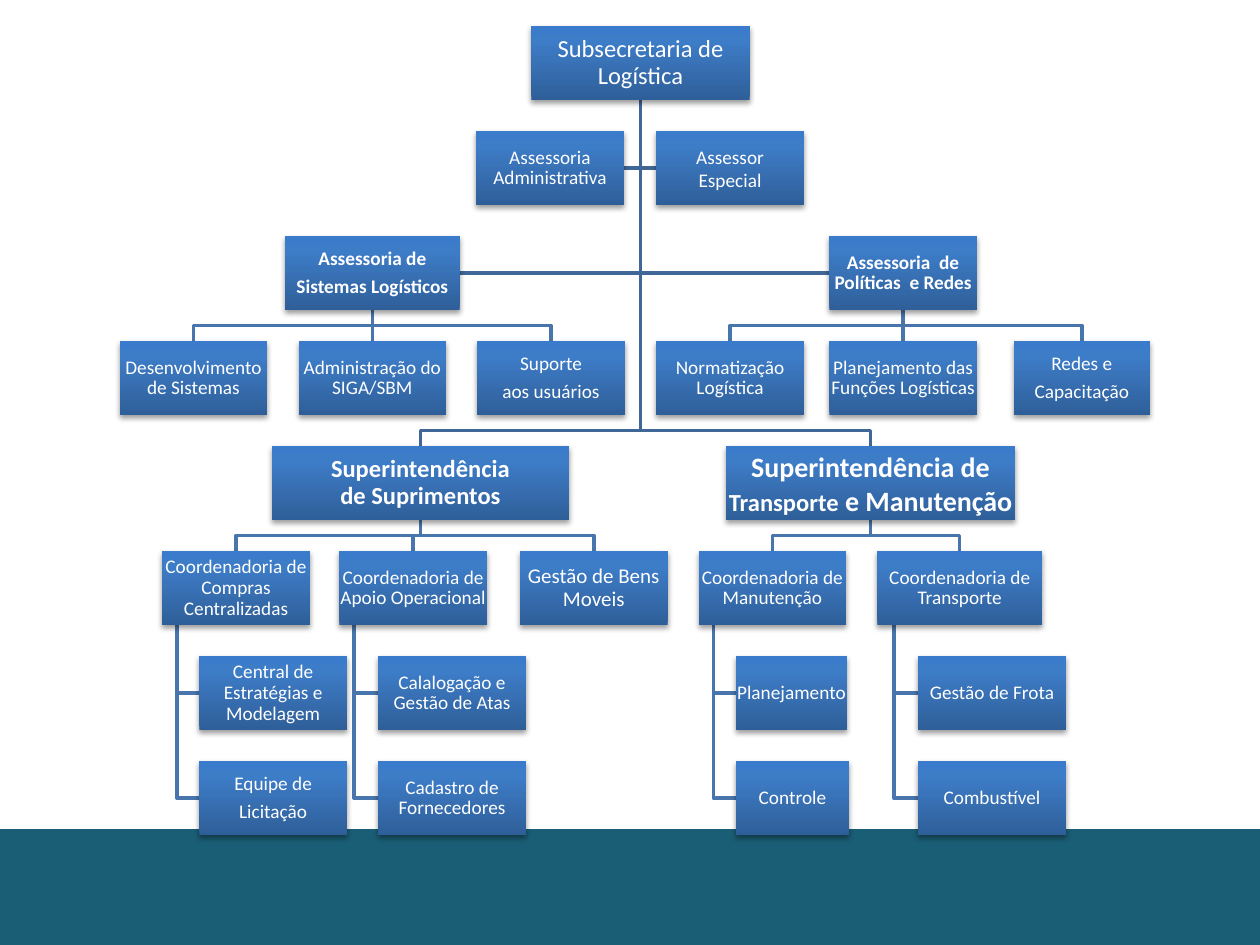
from collections import namedtuple
from pptx import Presentation
from pptx.dml.color import RGBColor
from pptx.enum.shapes import MSO_CONNECTOR, MSO_SHAPE
from pptx.enum.text import MSO_ANCHOR, PP_ALIGN
from pptx.oxml import parse_xml
from pptx.oxml.ns import nsdecls
from pptx.util import Pt

WHITE = RGBColor(0xFF, 0xFF, 0xFF)
TEAL = RGBColor(0x1A, 0x5E, 0x75)
MAIN_LINE = RGBColor(0x3F, 0x67, 0x97)
BRANCH_LINE = RGBColor(0x48, 0x75, 0xAC)

TOP, PITCH, HEIGHT, WIDTH = 15, 60, 42.25, 84.4
BUS_GAP = 9

GRADIENT = f"""<a:gradFill {nsdecls('a')} rotWithShape="1"><a:gsLst>
<a:gs pos="0"><a:srgbClr val="2F5F99"/></a:gs>
<a:gs pos="80000"><a:srgbClr val="3D7CC7"/></a:gs>
<a:gs pos="100000"><a:srgbClr val="3A7CCB"/></a:gs>
</a:gsLst><a:lin ang="16200000" scaled="0"/></a:gradFill>"""
LINE = f"<a:ln {nsdecls('a')}><a:noFill/></a:ln>"
SHADOW = f"""<a:effectLst {nsdecls('a')}>
<a:outerShdw blurRad="40000" dist="20000" dir="5400000" rotWithShape="0">
<a:srgbClr val="000000"><a:alpha val="38000"/></a:srgbClr>
</a:outerShdw></a:effectLst>"""

Unit = namedtuple(
    "Unit", "parent link row left text width size bold spacing gap",
    defaults=(WIDTH, 11, False, 0.9, 0.35))

units = {
    "logística": Unit(None, None, 0, 303.6, "Subsecretaria de Logística", 124.8, 14),
    "transporte": Unit("logística", "down", 4, 414.9, "Superintendência de\nTransporte e Manutenção",
                       165.2, 16, True, 1.0, 0),
    "coord. transporte": Unit("transporte", "down", 5, 501.3, "Coordenadoria de Transporte", 94.3),
    "frota": Unit("coord. transporte", "side", 6, 524.7, "Gestão de Frota"),
    "combustível": Unit("coord. transporte", "side", 7, 524.7, "Combustível"),
    "manutenção": Unit("transporte", "down", 5, 399.2, "Coordenadoria de Manutenção"),
    "planejamento": Unit("manutenção", "side", 6, 420.5, "Planejamento", 63.6),
    "controle": Unit("manutenção", "side", 7, 420.5, "Controle", 64.8),
    "suprimentos": Unit("logística", "down", 4, 155.5, "Superintendência\nde Suprimentos",
                        169.6, 14, True, 0.9, 0),
    "bens": Unit("suprimentos", "down", 5, 297.1, "Gestão de Bens Moveis", size=12),
    "apoio": Unit("suprimentos", "down", 5, 193.9, "Coordenadoria de Apoio Operacional"),
    "atas": Unit("apoio", "side", 6, 216.1, "Calalogação e Gestão de Atas"),
    "fornecedores": Unit("apoio", "side", 7, 216.1, "Cadastro de Fornecedores"),
    "compras": Unit("suprimentos", "down", 5, 92.7, "Coordenadoria de Compras Centralizadas"),
    "central": Unit("compras", "side", 6, 113.9, "Central de Estratégias e Modelagem"),
    "licitação": Unit("compras", "side", 7, 113.9, "Equipe de\nLicitação"),
    "especial": Unit("logística", "side", 1, 375, "Assessor\nEspecial", spacing=1.0, gap=0),
    "administrativa": Unit("logística", "side", 1, 272.1, "Assessoria Administrativa"),
    "políticas": Unit("logística", "side", 2, 473.9, "Assessoria  de Políticas  e Redes", bold=True),
    "redes": Unit("políticas", "down", 3, 579.3, "Redes e\nCapacitação", 77.8),
    "funções": Unit("políticas", "down", 3, 473.9, "Planejamento das Funções Logísticas"),
    "normatização": Unit("políticas", "down", 3, 375, "Normatização Logística"),
    "sistemas": Unit("logística", "side", 2, 162.9, "Assessoria de\nSistemas Logísticos", 99.8, bold=True),
    "suporte": Unit("sistemas", "down", 3, 272.7, "Suporte\naos usuários"),
    "administração": Unit("sistemas", "down", 3, 170.6, "Administração do SIGA/SBM"),
    "desenvolvimento": Unit("sistemas", "down", 3, 68.4, "Desenvolvimento de Sistemas"),
}

presentation = Presentation()
presentation.slide_width = Pt(720)
presentation.slide_height = Pt(540)
slide = presentation.slides.add_slide(presentation.slide_layouts[6])
shapes = slide.shapes

band = shapes.add_shape(MSO_SHAPE.RECTANGLE, 0, Pt(473.8), Pt(720), Pt(66.2))
band.shadow.inherit = False
band.fill.solid()
band.fill.fore_color.rgb = TEAL
band.line.fill.background()

for unit in units.values():
    if unit.parent is None:
        continue
    parent = units[unit.parent]
    parent_bottom = TOP + PITCH * parent.row + HEIGHT
    top = TOP + PITCH * unit.row
    trunk = parent.left + parent.width / 2
    center = unit.left + unit.width / 2
    if unit.link == "down":
        bus = top - BUS_GAP
        points = [(trunk, parent_bottom), (trunk, bus), (center, bus), (center, top)]
    else:
        if parent.row == 5:
            trunk = parent.left + parent.width / 10
        edge = unit.left if unit.left > trunk else unit.left + unit.width
        middle = top + HEIGHT / 2
        points = [(trunk, parent_bottom), (trunk, middle), (edge, middle)]
    points = [(Pt(x), Pt(y)) for x, y in points]
    if points[0][0] == points[-1][0]:
        link = shapes.add_connector(MSO_CONNECTOR.STRAIGHT, *points[0], *points[-1])
        link._element.spPr.append(parse_xml(f"<a:effectLst {nsdecls('a')}/>"))
    else:
        builder = shapes.build_freeform(*points[0])
        builder.add_line_segments(points[1:], close=False)
        link = builder.convert_to_shape()
        link.shadow.inherit = False
        link.fill.background()
    link.line.color.rgb = MAIN_LINE if parent.row == 0 else BRANCH_LINE
    link.line.width = Pt(2)

for unit in units.values():
    box = shapes.add_shape(MSO_SHAPE.RECTANGLE, Pt(unit.left), Pt(TOP + PITCH * unit.row),
                           Pt(unit.width), Pt(HEIGHT))
    for part in (GRADIENT, LINE, SHADOW):
        box._element.spPr.append(parse_xml(part))
    frame = box.text_frame
    frame.word_wrap = True
    frame.vertical_anchor = MSO_ANCHOR.MIDDLE
    frame.margin_left = frame.margin_right = frame.margin_top = frame.margin_bottom = Pt(0.6)
    frame.text = unit.text
    for paragraph in frame.paragraphs:
        paragraph.alignment = PP_ALIGN.CENTER
        paragraph.line_spacing = unit.spacing
        paragraph.space_after = Pt(round(unit.gap * unit.size, 2))
        paragraph.font.name = "Calibri"
        paragraph.font.size = Pt(unit.size)
        paragraph.font.bold = unit.bold
        paragraph.font.color.rgb = WHITE
        if paragraph.text.startswith("Transporte"):
            first_run = paragraph.runs[0]
            first_run.text = "Transporte"
            first_run.font.size = Pt(14)
            paragraph.add_run().text = " e Manutenção"

presentation.save("out.pptx")
